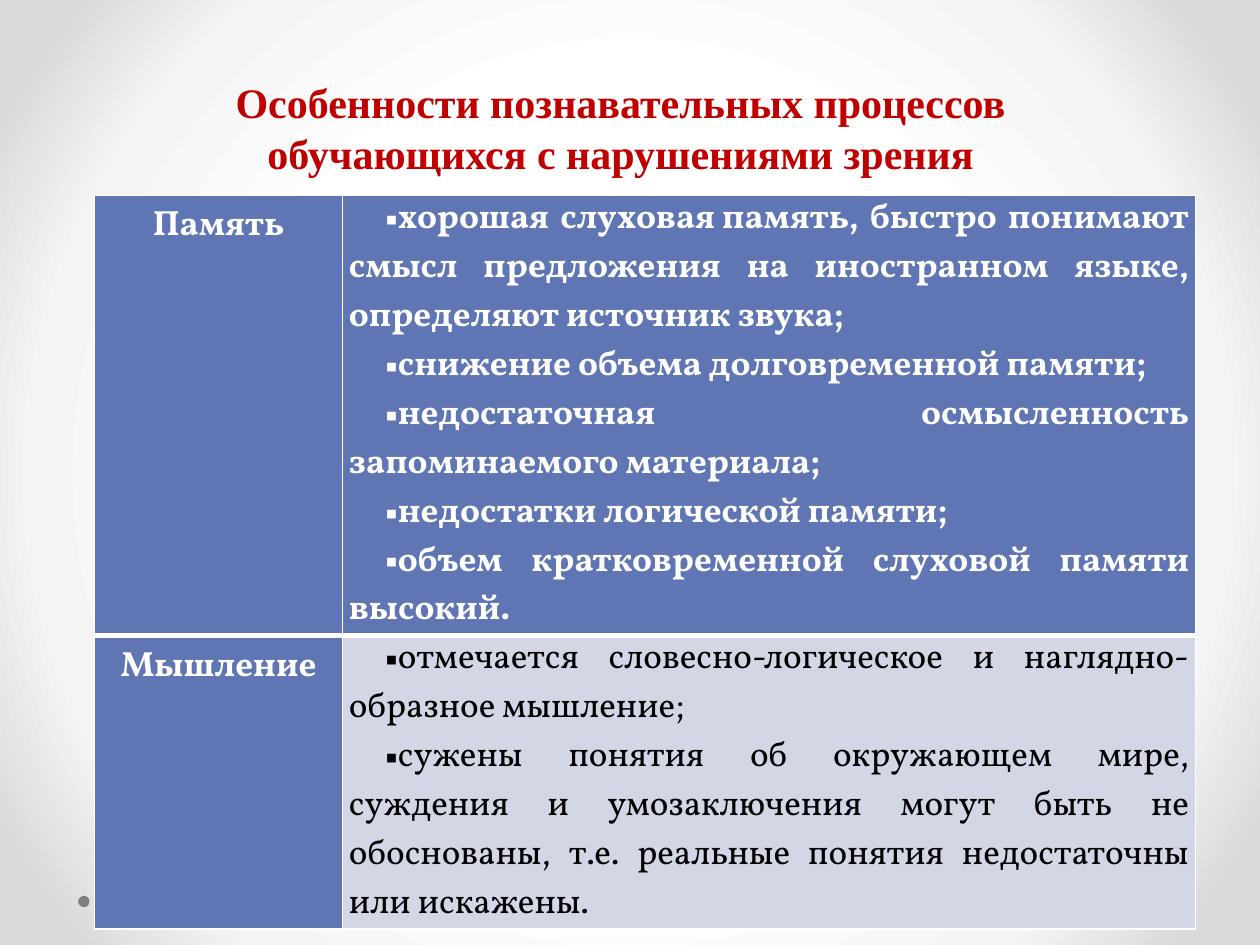
from lxml.etree import SubElement
from pptx import Presentation
from pptx.dml.color import RGBColor
from pptx.enum.shapes import MSO_SHAPE
from pptx.enum.text import MSO_ANCHOR, MSO_AUTO_SIZE, PP_ALIGN
from pptx.oxml import parse_xml
from pptx.oxml.ns import nsdecls, qn
from pptx.util import Inches, Pt


def color(value):
    return RGBColor.from_string(value)


def add_text(paragraph, text, font_name, size, font_color, bold):
    run = paragraph.add_run()
    run.text = text
    run.font.name = font_name
    run.font.size = Pt(size)
    run.font.bold = bold
    run.font.color.rgb = color(font_color)


presentation = Presentation()
presentation.slide_width = Inches(10)
presentation.slide_height = Inches(7.5)
slide = presentation.slides.add_slide(presentation.slide_layouts[5])

fill = slide.background.fill
fill.solid()
background_properties = slide.element.cSld.find(qn("p:bg")).find(qn("p:bgPr"))
stops = "".join(
    f'<a:gs pos="{position * 1000}"><a:srgbClr val="{value}"/></a:gs>'
    for position, value in [(50, "FFFFFF"), (76, "F4F4F4"), (92, "DADADA")]
)
gradient = parse_xml(
    f'<a:gradFill {nsdecls("a")} rotWithShape="1"><a:gsLst>{stops}</a:gsLst>'
    '<a:path path="circle"><a:fillToRect l="50000" t="50000" r="50000" b="50000"/>'
    "</a:path></a:gradFill>"
)
background_properties.replace(background_properties.find(qn("a:solidFill")), gradient)

for left in (9.25, 0.62):
    dot = slide.shapes.add_shape(
        MSO_SHAPE.OVAL, Inches(left), Inches(7.11), Inches(0.09), Inches(0.09)
    )
    dot.shadow.inherit = False
    dot.fill.solid()
    dot.fill.fore_color.rgb = color("808080")
    dot.line.fill.background()

title = slide.shapes.title
title.left, title.top = Inches(0.75), Inches(0.52)
title.width, title.height = Inches(8.35), Inches(0.94)
title.text_frame.word_wrap = True
title.text_frame.auto_size = MSO_AUTO_SIZE.NONE
title.text_frame.vertical_anchor = MSO_ANCHOR.BOTTOM
paragraph = title.text_frame.paragraphs[0]
paragraph.alignment = PP_ALIGN.CENTER
add_text(
    paragraph,
    "Особенности познавательных процессов обучающихся с нарушениями зрения",
    "Times New Roman", 24, "C00000", True,
)

processes = [
    ("Память", 2.68, "6076B4", "FFFFFF", True, [
        "хорошая слуховая\u00a0память, быстро понимают смысл предложения на иностранном языке, определяют источник звука;",
        "снижение объема долговременной памяти;",
        "недостаточная осмысленность запоминаемого материала;",
        "недостатки логической памяти;",
        "объем кратковременной слуховой памяти высокий.",
    ]),
    ("Мышление", 2.05, "D2D6E5", "000000", False, [
        "отмечается словесно-логическое и наглядно-образное мышление;",
        "сужены понятия об окружающем мире, суждения и умозаключения могут быть не обоснованы, т.е. реальные понятия недостаточны или искажены.",
    ]),
]
table = slide.shapes.add_table(
    len(processes), 2, Inches(0.75), Inches(1.55), Inches(8.74), Inches(4.73)
).table
table.columns[0].width = Inches(1.97)
table.columns[1].width = Inches(6.77)

for row, (name, height, cell_color, text_color, bold, features) in enumerate(processes):
    table.rows[row].height = Inches(height)
    name_cell, features_cell = table.cell(row, 0), table.cell(row, 1)

    paragraph = name_cell.text_frame.paragraphs[0]
    paragraph.alignment = PP_ALIGN.CENTER
    paragraph.line_spacing = 1.15
    add_text(paragraph, name, "Vollkorn", 20, "FFFFFF", True)

    for index, feature in enumerate(features):
        text_frame = features_cell.text_frame
        paragraph = text_frame.add_paragraph() if index else text_frame.paragraphs[0]
        paragraph.alignment = PP_ALIGN.JUSTIFY
        add_text(paragraph, feature, "Vollkorn", 20, text_color, bold)
        properties = paragraph._p.get_or_add_pPr()
        properties.set("marL", "0")
        properties.set("indent", str(Inches(0.29)))
        SubElement(properties, qn("a:buFont")).set("typeface", "Times New Roman")
        SubElement(properties, qn("a:buChar")).set("char", "▪")

    for cell, value in [(name_cell, "6076B4"), (features_cell, cell_color)]:
        cell.margin_left = cell.margin_right = Inches(0.05)
        cell.margin_top = cell.margin_bottom = 0
        cell.fill.solid()
        cell.fill.fore_color.rgb = color(value)
        widths = {"L": 1, "R": 1, "T": 3 if row else 1, "B": 1 if row else 3}
        for position, (side, width) in enumerate(widths.items()):
            border = parse_xml(
                f'<a:ln{side} {nsdecls("a")} w="{Pt(width)}"><a:solidFill>'
                f'<a:srgbClr val="FFFFFF"/></a:solidFill></a:ln{side}>'
            )
            cell._tc.get_or_add_tcPr().insert(position, border)

presentation.save("out.pptx")
